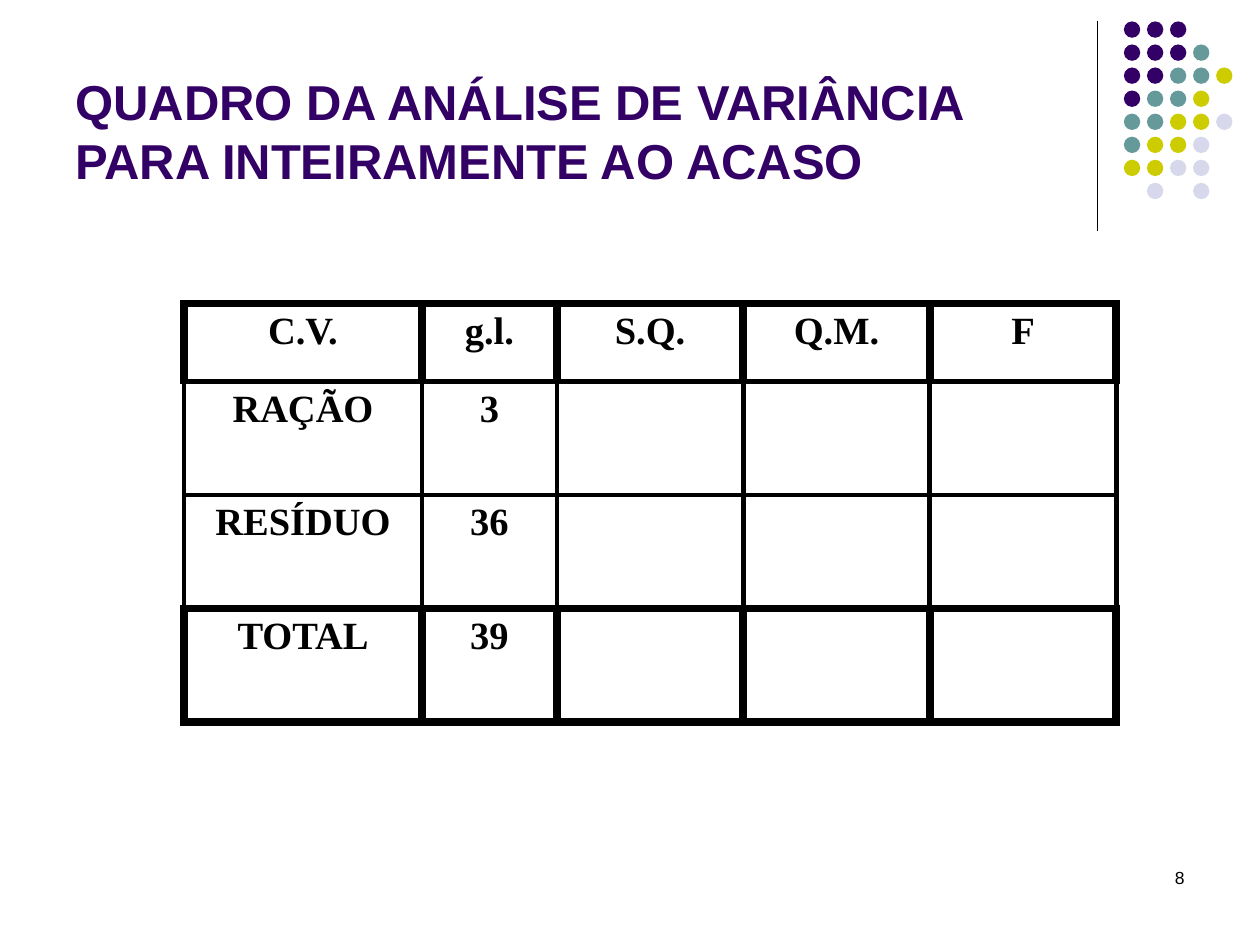
from pptx import Presentation
from pptx.dml.color import RGBColor
from pptx.enum.shapes import MSO_CONNECTOR, MSO_SHAPE
from pptx.enum.text import MSO_ANCHOR, PP_ALIGN
from pptx.oxml.ns import qn
from pptx.util import Inches, Pt
from lxml.etree import SubElement

DOTS = ["PPP", "PPPT", "PPTTY", "PTTY", "TTYYL", "TYYL", "YYLL", " L L"]
TINTS = {"P": "330066", "T": "669999", "Y": "CCCC00", "L": "D8D8EC"}
ROWS = [
    ["C.V.", "g.l.", "S.Q.", "Q.M.", "F"],
    ["RAÇÃO", "3", "", "", ""],
    ["RESÍDUO", "36", "", "", ""],
    ["TOTAL", "39", "", "", ""],
]
WIDTHS = [1.89, 1.07, 1.48, 1.48, 1.48]
HEIGHTS = [0.62, 0.9, 0.9, 0.9]
SIDES = [5, 3, 3, 5]
RULES = [5, 3, 3, 5, 5]


def color(code):
    return RGBColor.from_string(code)


def style(para, face, size, code, bold, align):
    para.font.name = face
    para.font.size = Pt(size)
    para.font.bold = bold
    para.font.color.rgb = color(code)
    para.alignment = align


def add_text(slide, box, text, size, code, bold, align, anchor):
    frame = slide.shapes.add_textbox(*map(Inches, box)).text_frame
    frame.word_wrap = True
    frame.vertical_anchor = anchor
    para = frame.paragraphs[0]
    para.text = text
    style(para, "Arial", size, code, bold, align)


def add_rule(slide, x, top, end):
    line = slide.shapes.add_connector(
        MSO_CONNECTOR.STRAIGHT, Inches(x), Inches(top), Inches(x), Inches(end))
    line.line.color.rgb = color("000000")
    line.line.width = Pt(0.75)
    SubElement(line._element.spPr, qn("a:effectLst"))


def add_dots(slide, left, top, step, size):
    group = slide.shapes.add_group_shape()
    for row, marks in enumerate(DOTS):
        for col, mark in enumerate(marks):
            if mark == " ":
                continue
            dot = group.shapes.add_shape(
                MSO_SHAPE.OVAL, Inches(left + col * step),
                Inches(top + row * step), Inches(size), Inches(size))
            dot.shadow.inherit = False
            dot.fill.solid()
            dot.fill.fore_color.rgb = color(TINTS[mark])
            dot.line.fill.background()


def add_edge(cell, side, width):
    props = cell._tc.get_or_add_tcPr()
    edge = SubElement(props, qn("a:ln" + side), w=str(Pt(width)))
    fill = SubElement(edge, qn("a:solidFill"))
    SubElement(fill, qn("a:srgbClr"), val="000000")


def add_grid(slide, box):
    table = slide.shapes.add_table(
        len(ROWS), len(WIDTHS), *map(Inches, box)).table
    table.first_row = table.horz_banding = False
    for col, width in zip(table.columns, WIDTHS):
        col.width = Inches(width)
    for i, texts in enumerate(ROWS):
        table.rows[i].height = Inches(HEIGHTS[i])
        widths = {"L": SIDES[i], "R": SIDES[i], "T": RULES[i], "B": RULES[i + 1]}
        for j, text in enumerate(texts):
            cell = table.cell(i, j)
            for side, width in widths.items():
                add_edge(cell, side, width)
            cell.fill.background()
            para = cell.text_frame.paragraphs[0]
            para.text = text
            style(para, "Times New Roman", 22, "000000", True, PP_ALIGN.CENTER)


def main():
    deck = Presentation()
    deck.slide_width, deck.slide_height = Inches(10), Inches(7.5)
    slide = deck.slides.add_slide(deck.slide_layouts[6])
    add_rule(slide, 8.71, 0.17, 1.83)
    add_dots(slide, 8.92, 0.17, 0.183, 0.13)
    add_text(slide, (0.5, 0.13, 8.25, 1.42),
             "QUADRO DA ANÁLISE DE VARIÂNCIA PARA INTEIRAMENTE AO ACASO",
             28, "330066", True, PP_ALIGN.LEFT, MSO_ANCHOR.BOTTOM)
    add_grid(slide, (1.46, 2.41, 7.4, 3.32))
    add_text(slide, (7.17, 6.83, 2.33, 0.5), "8",
             10, "000000", False, PP_ALIGN.RIGHT, MSO_ANCHOR.TOP)
    deck.save("out.pptx")


if __name__ == "__main__":
    main()
